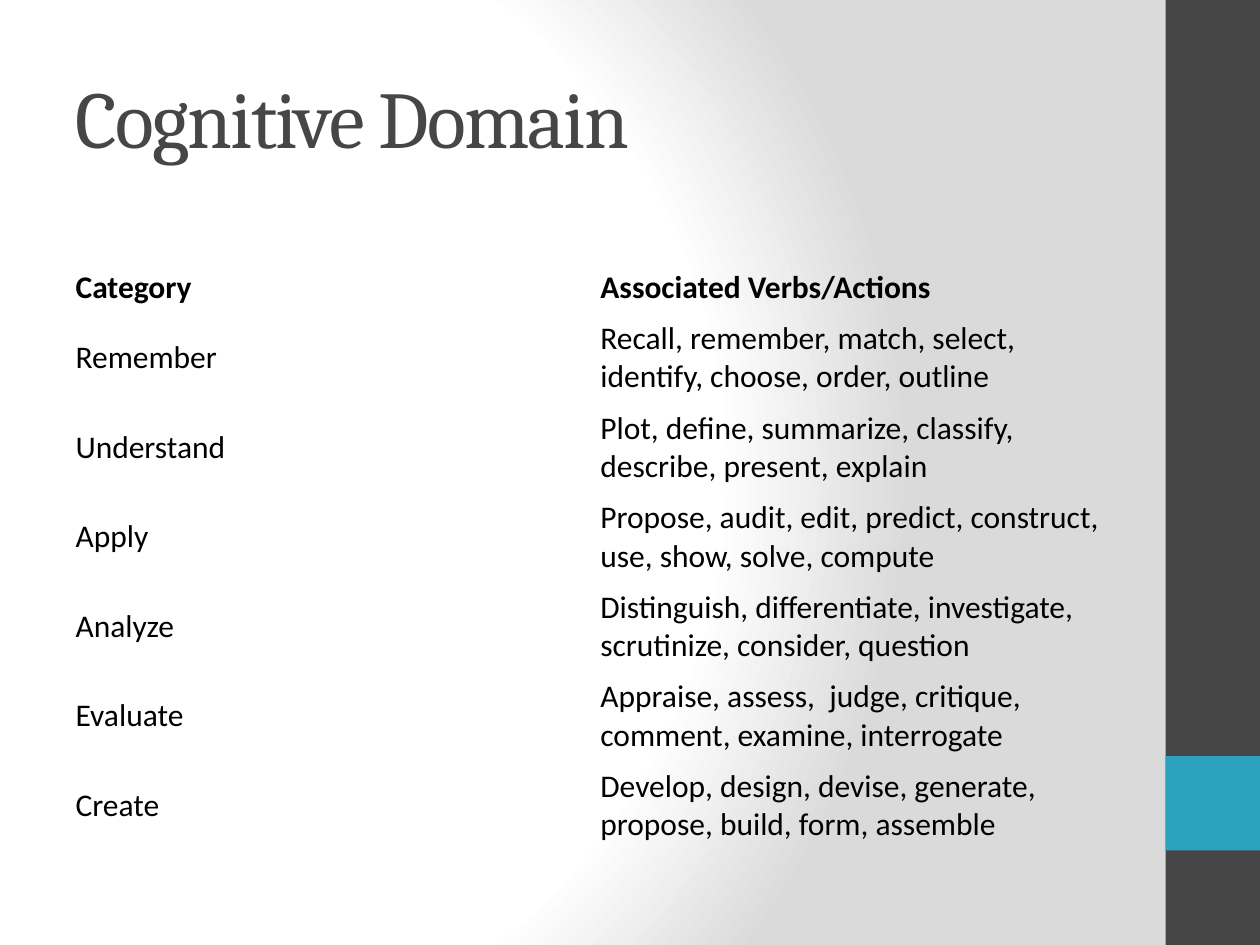
from pptx import Presentation
from pptx.dml.color import RGBColor
from pptx.enum.shapes import MSO_SHAPE
from pptx.enum.text import MSO_ANCHOR, PP_ALIGN
from pptx.oxml import parse_xml
from pptx.oxml.ns import nsdecls, qn
from pptx.util import Inches, Pt

RECTANGLE = MSO_SHAPE.RECTANGLE
MIDDLE = MSO_ANCHOR.MIDDLE
LEFT = PP_ALIGN.LEFT
NO_STYLE_NO_GRID = "{2D5ABB26-0587-4C30-8999-92F81FD0307C}"

DARK, TEAL, BLACK = "464646", "2DA2BF", "000000"
GRADIENT = [(0, "FFFFFF"), (75, "FFFFFF"), (100, "DADADA")]

ROWS = [
    ("Category", "Associated Verbs/Actions"),
    ("Remember", "Recall, remember, match, select, identify, choose, order, outline"),
    ("Understand", "Plot, define, summarize, classify, describe, present, explain"),
    ("Apply", "Propose, audit, edit, predict, construct, use, show, solve, compute"),
    ("Analyze", "Distinguish, differentiate, investigate, scrutinize, consider, question"),
    ("Evaluate", "Appraise, assess,  judge, critique, comment, examine, interrogate"),
    ("Create", "Develop, design, devise, generate, propose, build, form, assemble"),
]


def color(hex_value):
    return RGBColor.from_string(hex_value)


def style(paragraph, font_name, size, hex_value, bold=False):
    paragraph.alignment = LEFT
    paragraph.font.name = font_name
    paragraph.font.size = Pt(size)
    paragraph.font.bold = bold
    paragraph.font.color.rgb = color(hex_value)


prs = Presentation()
prs.slide_width, prs.slide_height = Inches(10), Inches(7.5)
W, H = prs.slide_width, prs.slide_height
slide = prs.slides.add_slide(prs.slide_layouts[5])

# Background: circular gradient centred on the left part of the slide
stops = "".join(
    f'<a:gs pos="{share * 1000}"><a:srgbClr val="{hex_value}"/></a:gs>'
    for share, hex_value in GRADIENT
)
background = parse_xml(
    f'<p:bg {nsdecls("p", "a")}><p:bgPr><a:gradFill rotWithShape="1">'
    f"<a:gsLst>{stops}</a:gsLst>"
    '<a:path path="circle"><a:fillToRect l="20000" t="50000" r="100000" b="50000"/></a:path>'
    "</a:gradFill><a:effectLst/></p:bgPr></p:bg>"
)
slide.element.cSld.insert(0, background)

# Side band, one tenth of the height for its accent square
band_width = int(W * 0.075)
for top, height, hex_value in [(0, H, DARK), (int(H * 0.8), int(H * 0.1), TEAL)]:
    band = slide.shapes.add_shape(RECTANGLE, W - band_width, top, band_width, height)
    band.shadow.inherit = False
    band.fill.solid()
    band.fill.fore_color.rgb = color(hex_value)
    band.line.fill.background()

# Title
margin, content_width = int(W * 0.05), Inches(8.33)
title = slide.shapes.title
title.left, title.top = margin, int(H * 0.04)
title.width, title.height = content_width, Inches(1.25)
title.text_frame.text = "Cognitive Domain"
title.text_frame.vertical_anchor = MIDDLE
heading = title.text_frame.paragraphs[0]
style(heading, "Cambria", 46, DARK)
heading.runs[0].font._element.set("spc", "-100")

# Table of categories and verbs
header_height, row_height = Inches(0.4), Inches(0.71)
table_height = header_height + row_height * (len(ROWS) - 1)
table = slide.shapes.add_table(
    len(ROWS), 2, margin, Inches(2.08), content_width, table_height
).table
table.first_row = table.horz_banding = False
table._tbl.tblPr.find(qn("a:tableStyleId")).text = NO_STYLE_NO_GRID

for r, texts in enumerate(ROWS):
    table.rows[r].height = row_height if r else header_height
    for c, text in enumerate(texts):
        cell = table.cell(r, c)
        cell.fill.background()
        cell.vertical_anchor = MIDDLE
        cell.text = text
        style(cell.text_frame.paragraphs[0], "Calibri", 18, BLACK, bold=r == 0)

prs.save("out.pptx")
